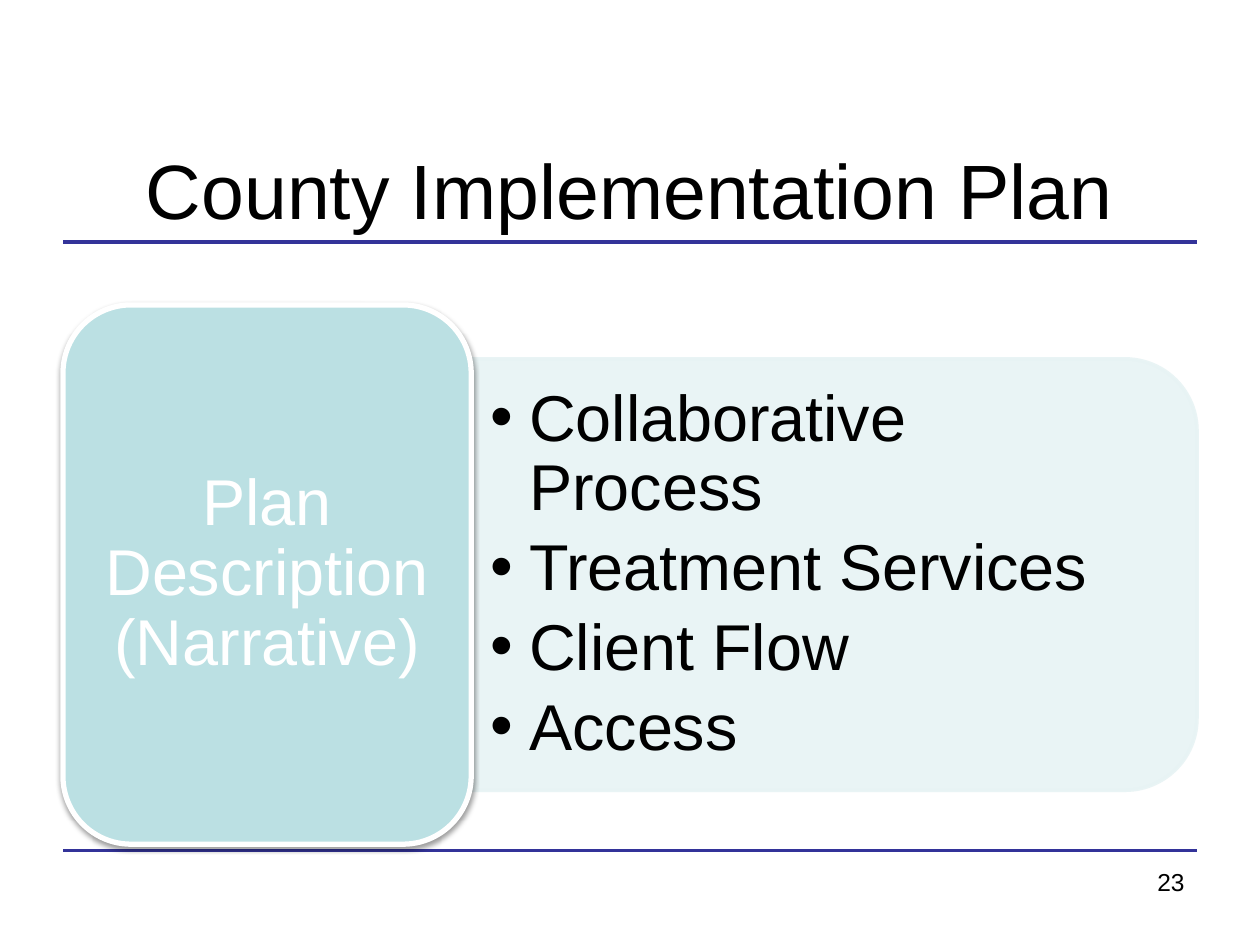
from lxml.etree import SubElement
from pptx import Presentation
from pptx.dml.color import RGBColor
from pptx.enum.shapes import MSO_CONNECTOR, MSO_SHAPE
from pptx.enum.text import MSO_ANCHOR, PP_ALIGN
from pptx.oxml.ns import qn
from pptx.util import Inches, Pt

WIDTH, HEIGHT = 10, 7.5
MARGIN = 0.5
CONTENT = WIDTH - 2 * MARGIN
LABEL_SHARE = 0.36
TOPICS = ["Collaborative Process", "Treatment Services", "Client Flow", "Access"]


def color(hex_code):
    """Turn a hex string into a colour."""
    return RGBColor.from_string(hex_code)


def add_alpha(color_parent, percent):
    """Make the solid colour inside the given element partly transparent."""
    srgb = color_parent.find(".//" + qn("a:srgbClr"))
    SubElement(srgb, qn("a:alpha"), val=str(percent * 1000))


def add_rule(slide, y):
    """Draw a horizontal rule across the content width."""
    rule = slide.shapes.add_connector(
        MSO_CONNECTOR.STRAIGHT, Inches(MARGIN), Inches(y), Inches(WIDTH - MARGIN), Inches(y))
    rule.line.color.rgb = color("333399")
    rule.line.width = Pt(2.25)
    SubElement(rule._element.spPr, qn("a:effectLst"))


def add_text(slide, box, lines, size, align, ink="000000", anchor=MSO_ANCHOR.MIDDLE,
             inset=(0.1, 0.05), spacing=1.0, after=0, bullet_indent=0):
    """Write paragraphs in a box, with bullets if an indent is given."""
    frame = slide.shapes.add_textbox(*map(Inches, box)).text_frame
    frame.word_wrap = True
    frame.vertical_anchor = anchor
    frame.margin_left = frame.margin_right = Inches(inset[0])
    frame.margin_top = frame.margin_bottom = Inches(inset[1])
    frame.text = "\n".join(lines)
    for paragraph in frame.paragraphs:
        paragraph.alignment = align
        paragraph.line_spacing = spacing
        paragraph.space_after = Pt(after)
        if bullet_indent:
            properties = paragraph._p.get_or_add_pPr()
            properties.set("marL", str(Inches(bullet_indent)))
            properties.set("indent", str(-Inches(bullet_indent)))
            SubElement(properties, qn("a:buFont"), typeface="Arial")
            SubElement(properties, qn("a:buChar"), char="•")
        for run in paragraph.runs:
            run.font.name = "Arial"
            run.font.size = Pt(size)
            run.font.color.rgb = color(ink)


def add_panel(slide, preset, box, fill, line, line_width):
    """Draw a filled, outlined panel without a shadow."""
    panel = slide.shapes.add_shape(preset, *map(Inches, box))
    panel.shadow.inherit = False
    panel.fill.solid()
    panel.fill.fore_color.rgb = color(fill)
    panel.line.color.rgb = color(line)
    panel.line.width = Pt(line_width)
    return panel


def add_topics(slide, box):
    """Place the bulleted topics on a panel rounded at its right end."""
    left, top, width, height = box
    turned = (left + (width - height) / 2, top + (height - width) / 2, height, width)
    panel = add_panel(slide, MSO_SHAPE.ROUND_2_SAME_RECTANGLE, turned, "E7F3F4", "E7F3F4", 2)
    panel.rotation = 90
    properties = panel._element.spPr
    add_alpha(properties.find(qn("a:solidFill")), 90)
    add_alpha(properties.find(qn("a:ln")), 90)
    corner = 0.17
    add_text(slide, (left, top + corner, width - corner, height - 2 * corner), TOPICS, 37,
             PP_ALIGN.LEFT, inset=(0.15, 0.08), spacing=0.9, after=5.6, bullet_indent=0.31)


def add_label(slide, box):
    """Place the plan label on a rounded card with a soft shadow."""
    left, top, width, height = box
    card = add_panel(slide, MSO_SHAPE.ROUNDED_RECTANGLE, box, "BBE0E3", "FFFFFF", 3)
    effects = card._element.spPr.find(qn("a:effectLst"))
    shadow = SubElement(effects, qn("a:outerShdw"), blurRad=str(Pt(3.1)), dist=str(Pt(1.6)),
                        dir="5400000", rotWithShape="0")
    SubElement(shadow, qn("a:srgbClr"), val="000000")
    add_alpha(shadow, 38)
    corner = 0.16
    add_text(slide, (left + corner, top + corner, width - 2 * corner, height - 2 * corner),
             ["Plan Description (Narrative)"], 37, PP_ALIGN.CENTER, ink="FFFFFF",
             inset=(0.15, 0.08), spacing=0.9)


def add_plan(slide, box):
    """Split a box into the label card and the topics panel beside it."""
    left, top, width, height = box
    label_width = width * LABEL_SHARE
    panel_height = height * 0.8
    add_topics(slide, (left + label_width, top + (height - panel_height) / 2,
                       width - label_width, panel_height))
    add_label(slide, (left, top, label_width, height))


def main():
    """Build and save the slide."""
    deck = Presentation()
    deck.slide_width, deck.slide_height = Inches(WIDTH), Inches(HEIGHT)
    slide = deck.slides.add_slide(deck.slide_layouts[6])
    for y in (6.75, 1.92):
        add_rule(slide, y)
    add_text(slide, (MARGIN, 1, CONTENT, 1), ["County Implementation Plan"], 44, PP_ALIGN.CENTER)
    add_plan(slide, (MARGIN, 2.42, CONTENT, 4.28))
    add_text(slide, (7.17, 6.83, 2.33, 0.52), ["23"], 14, PP_ALIGN.RIGHT, anchor=MSO_ANCHOR.TOP)
    deck.save("out.pptx")


if __name__ == "__main__":
    main()
